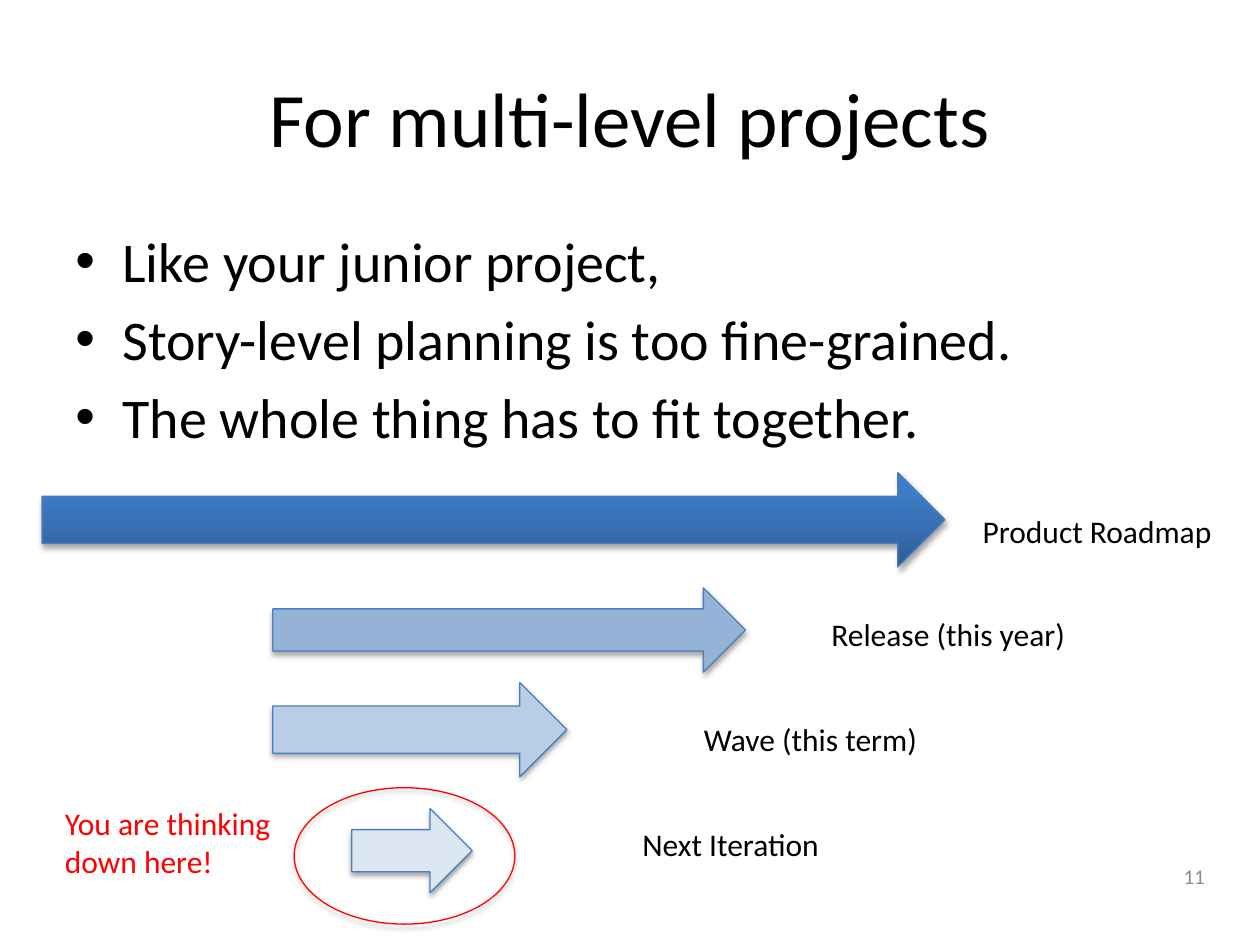
from lxml.etree import SubElement
from pptx import Presentation
from pptx.dml.color import RGBColor
from pptx.enum.shapes import MSO_SHAPE
from pptx.enum.text import MSO_ANCHOR, MSO_AUTO_SIZE, PP_ALIGN
from pptx.oxml.ns import qn
from pptx.util import Cm, Pt

BLACK = RGBColor(0x00, 0x00, 0x00)
GRAY = RGBColor(0x8C, 0x8C, 0x8C)
RED = RGBColor(0xFF, 0x00, 0x00)
OUTLINE = RGBColor(0x4B, 0x7E, 0xBC)
RELEASE_BLUE = RGBColor(0x95, 0xB3, 0xD7)
WAVE_BLUE = RGBColor(0xB9, 0xCD, 0xE5)
ITERATION_BLUE = RGBColor(0xDC, 0xE6, 0xF2)
ROADMAP_STOPS = [
    (0, RGBColor(0x2F, 0x5F, 0x99)),
    (80, RGBColor(0x3D, 0x7C, 0xC7)),
    (100, RGBColor(0x3A, 0x7C, 0xCB)),
]

LEVELS = [
    ("Product Roadmap", None, (0.85, 9.53, 18.2, 1.9), (19.56, 10.19, 5.21)),
    ("Release (this year)", RELEASE_BLUE, (5.5, 11.85, 9.53, 1.7), (16.51, 12.27, 5.28)),
    ("Wave (this term)", WAVE_BLUE, (5.5, 13.76, 5.93, 1.9), (13.94, 14.39, 4.9)),
    ("Next Iteration", ITERATION_BLUE, (7.09, 16.3, 2.43, 1.7), (12.7, 16.51, 4.14)),
]
POINTS = [
    "Like your junior project,",
    "Story-level planning is too fine-grained.",
    "The whole thing has to fit together.",
]


def style(paragraph, size, color):
    paragraph.font.name = "Calibri"
    paragraph.font.size = Pt(size)
    paragraph.font.color.rgb = color


def add_text(slide, text, box, size, color=BLACK, align=PP_ALIGN.LEFT,
             anchor=MSO_ANCHOR.TOP, wrap=True, grow=False):
    frame = slide.shapes.add_textbox(*map(Cm, box)).text_frame
    frame.word_wrap = wrap
    frame.vertical_anchor = anchor
    frame.auto_size = MSO_AUTO_SIZE.SHAPE_TO_FIT_TEXT if grow else MSO_AUTO_SIZE.NONE
    frame.text = text
    for paragraph in frame.paragraphs:
        paragraph.alignment = align
        style(paragraph, size, color)
    return frame


def add_bullets(slide, points, box):
    frame = add_text(slide, "", box, 32)
    for index, point in enumerate(points):
        paragraph = frame.add_paragraph() if index else frame.paragraphs[0]
        paragraph.text = point
        if index:
            paragraph.space_before = Pt(6)
        properties = paragraph._p.get_or_add_pPr()
        for existing in list(properties.findall(qn("a:defRPr"))):
            properties.remove(existing)
        properties.set("marL", str(Cm(0.95)))
        properties.set("indent", str(-Cm(0.95)))
        SubElement(properties, qn("a:buFont"), typeface="Arial")
        SubElement(properties, qn("a:buChar"), char="•")
        style(paragraph, 32, BLACK)


def add_shadow(shape):
    shape.shadow.inherit = False
    effects = shape._element.spPr.find(qn("a:effectLst"))
    shadow = SubElement(effects, qn("a:outerShdw"), blurRad=str(Pt(3.1)),
                        dist=str(Pt(1.8)), dir="5400000", rotWithShape="0")
    color = SubElement(shadow, qn("a:srgbClr"), val=str(BLACK))
    SubElement(color, qn("a:alpha"), val="35000")


def fill_gradient(shape, stops):
    shape.fill.gradient()
    shape.fill.gradient_angle = 90
    stop_list = shape._element.spPr.find(qn("a:gradFill")).find(qn("a:gsLst"))
    for default in list(stop_list):
        stop_list.remove(default)
    for percent, color in stops:
        stop = SubElement(stop_list, qn("a:gs"), pos=str(percent * 1000))
        SubElement(stop, qn("a:srgbClr"), val=str(color))


def add_outlined(slide, kind, box, outline):
    shape = slide.shapes.add_shape(kind, *map(Cm, box))
    shape.line.color.rgb = outline
    shape.line.width = Pt(0.75)
    add_shadow(shape)
    return shape


def add_level(slide, name, color, arrow_box, label_box):
    arrow = add_outlined(slide, MSO_SHAPE.RIGHT_ARROW, arrow_box, OUTLINE)
    if color is None:
        fill_gradient(arrow, ROADMAP_STOPS)
    else:
        arrow.fill.solid()
        arrow.fill.fore_color.rgb = color
    add_text(slide, name, (*label_box, 1.02), 18, wrap=False, grow=True)


def main():
    deck = Presentation()
    deck.slide_width, deck.slide_height = Cm(25.4), Cm(19.05)
    slide = deck.slides.add_slide(deck.slide_layouts[6])

    add_text(slide, "11", (18.62, 17.15, 5.92, 1.02), 12, GRAY,
             PP_ALIGN.RIGHT, MSO_ANCHOR.MIDDLE)
    add_text(slide, "For multi-level projects", (1.27, 0.76, 22.86, 3.18), 44,
             align=PP_ALIGN.CENTER, anchor=MSO_ANCHOR.MIDDLE)
    add_bullets(slide, POINTS, (1.27, 4.45, 22.86, 12.57))
    for level in LEVELS:
        add_level(slide, *level)
    focus = add_outlined(slide, MSO_SHAPE.OVAL, (5.93, 15.88, 4.45, 2.75), RED)
    focus.fill.background()
    add_text(slide, "You are thinking down here!", (1.06, 16.09, 5.29, 1.8), 18,
             RED, grow=True)

    deck.save("out.pptx")


if __name__ == "__main__":
    main()
